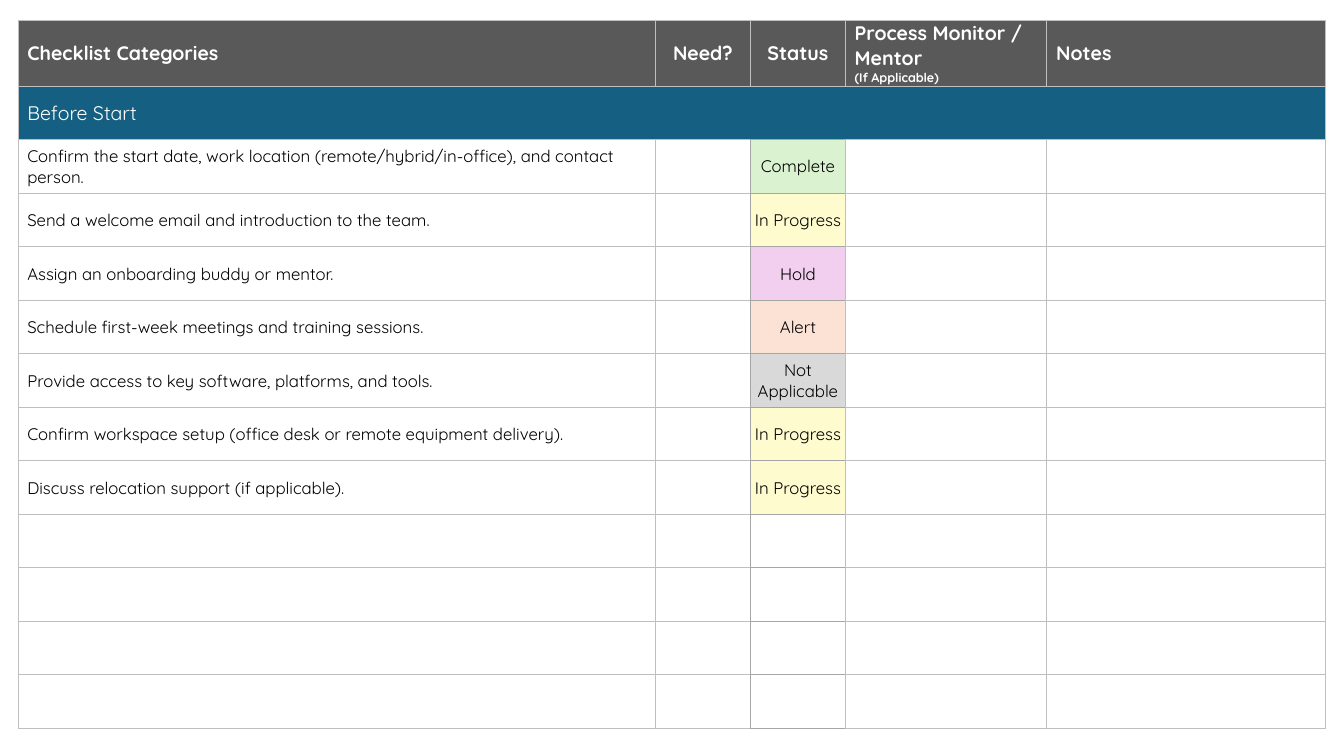
from lxml import etree
from pptx import Presentation
from pptx.dml.color import RGBColor
from pptx.enum import text as kinds
from pptx.oxml import ns
from pptx.util import Pt

# Content
HEADS = [
    [("Checklist Categories", 14)],
    [("Need?", 14)],
    [("Status", 14)],
    [("Process Monitor / Mentor \v", 14), ("(If Applicable)", 9)],
    [("Notes", 14)],
]
PHASE = "Before Start"
TASKS = [
    ("Confirm the start date, work location (remote/hybrid/in-office), and contact person.", "Complete"),
    ("Send a welcome email and introduction to the team.", "In Progress"),
    ("Assign an onboarding buddy or mentor.", "Hold"),
    ("Schedule first-week meetings and training sessions.", "Alert"),
    ("Provide access to key software, platforms, and tools.", "Not Applicable"),
    ("Confirm workspace setup (office desk or remote equipment delivery).", "In Progress"),
    ("Discuss relocation support (if applicable).", "In Progress"),
]
BLANKS = 4
TINTS = {
    "Complete": "DAF2D0",
    "In Progress": "FEFCCE",
    "Hold": "F2CEEF",
    "Alert": "FBE2D5",
    "Not Applicable": "D9D9D9",
    "": None,
}
FONT = "Quicksand"
WHITE, BLACK, GRAY, BLUE = "FFFFFF", "000000", "595959", "156082"
LIGHT, DARK = "BFBFBF", "A6A6A6"

# Layout in px, 96 to the inch
PX = 9525
WIDE, HIGH = 1280, 720
LEFT, TOP = 17, 19
COLS = [607, 91, 90, 192, 265]
ROW = 51
NEED, STATUS = 1, 2
CENTERED = (NEED, STATUS)


def px(n):
    return n * PX


def color(code):
    return RGBColor.from_string(code)


def edge(cell, **sides):
    """Draw the four borders, light unless a side names its colour."""
    props = cell._tc.get_or_add_tcPr()
    for side in "LRTB":
        line = etree.SubElement(props, ns.qn("a:ln" + side), w=str(Pt(0.5)))
        solid = etree.SubElement(line, ns.qn("a:solidFill"))
        etree.SubElement(solid, ns.qn("a:srgbClr"), val=sides.get(side, LIGHT))


def paint(cell, fill):
    if fill:
        cell.fill.solid()
        cell.fill.fore_color.rgb = color(fill)
    else:
        cell.fill.background()


def write(cell, runs, ink=BLACK, bold=False, center=False):
    cell.vertical_anchor = kinds.MSO_ANCHOR.MIDDLE
    cell.margin_left = px(1 if center else 9)
    cell.margin_right = cell.margin_top = px(1)
    cell.margin_bottom = 0
    para = cell.text_frame.paragraphs[0]
    para.alignment = kinds.PP_ALIGN.CENTER if center else kinds.PP_ALIGN.LEFT
    for words, size in runs:
        run = para.add_run()
        run.text = words.rstrip("\v")
        run.font.name = FONT
        run.font.size = Pt(size)
        run.font.bold = bold
        run.font.color.rgb = color(ink)
        if words.endswith("\v"):
            para.add_line_break()


def main():
    deck = Presentation()
    deck.slide_width, deck.slide_height = px(WIDE), px(HIGH)
    slide = deck.slides.add_slide(deck.slide_layouts[6])

    # Table grid
    rows = TASKS + [("", "")] * BLANKS
    count = len(rows) + 2
    frame = slide.shapes.add_table(
        count, len(COLS), px(LEFT), px(TOP), px(sum(COLS)), px(ROW * count))
    table = frame.table
    table.first_row = table.horz_banding = False
    for col, width in zip(table.columns, COLS):
        col.width = px(width)

    # Header row
    for c, runs in enumerate(HEADS):
        cell = table.cell(0, c)
        edge(cell)
        paint(cell, GRAY)
        write(cell, runs, ink=WHITE, bold=True, center=c in CENTERED)

    # Phase band
    for c in range(len(COLS)):
        edge(table.cell(1, c))
        paint(table.cell(1, c), BLUE)
    band = table.cell(1, 0)
    band.merge(table.cell(1, len(COLS) - 1))
    write(band, [(PHASE, 14)], ink=WHITE)

    # Task rows
    for r, (task, status) in enumerate(rows, 2):
        for c in range(len(COLS)):
            cell = table.cell(r, c)
            if c == NEED:
                edge(cell, R=DARK)
            elif c == STATUS:
                edge(cell, L=DARK, T=DARK, B=DARK)
            else:
                edge(cell)
            paint(cell, TINTS[status] if c == STATUS else WHITE)
        if task:
            write(table.cell(r, 0), [(task, 12)])
            write(table.cell(r, STATUS), [(status, 12)], center=True)

    deck.save("out.pptx")


if __name__ == "__main__":
    main()
